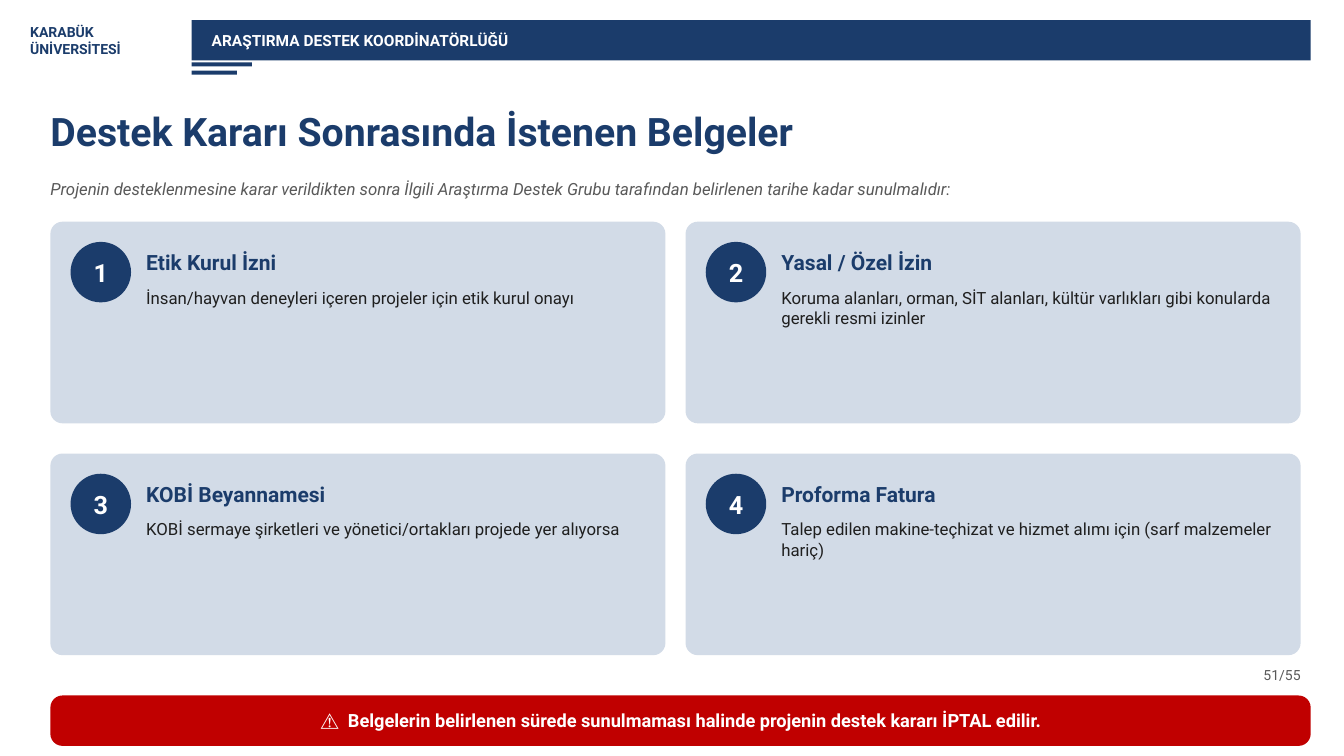
import dataclasses

import pptx
import pptx.dml.color
import pptx.enum.shapes
import pptx.enum.text
import pptx.util

Inches = pptx.util.Inches
Kind = pptx.enum.shapes.MSO_SHAPE
Align = pptx.enum.text.PP_ALIGN
Anchor = pptx.enum.text.MSO_ANCHOR


@dataclasses.dataclass(frozen=True)
class Style:
    """Size, colour and weight of a piece of text."""
    size: int
    color: str
    bold: bool = False
    slant: bool = False


@dataclasses.dataclass(frozen=True)
class Theme:
    """Font, colours and text styles of the slide."""
    font: str = "Roboto"
    navy: str = "1B3C6B"
    card: str = "D2DBE7"
    red: str = "C00000"
    logo: Style = Style(10, "1B3C6B", True)
    unit: Style = Style(11, "FFFFFF", True)
    page: Style = Style(10, "595959")
    title: Style = Style(28, "1B3C6B", True)
    intro: Style = Style(12, "595959", slant=True)
    badge: Style = Style(18, "FFFFFF", True)
    head: Style = Style(15, "1B3C6B", True)
    body: Style = Style(12, "1F1F1F")
    alert: Style = Style(13, "FFFFFF", True)


THEME = Theme()

CARDS = [
    ("Etik Kurul İzni",
     "İnsan/hayvan deneyleri içeren projeler için etik kurul onayı"),
    ("Yasal / Özel İzin",
     "Koruma alanları, orman, SİT alanları, kültür varlıkları gibi konularda gerekli resmi izinler"),
    ("KOBİ Beyannamesi",
     "KOBİ sermaye şirketleri ve yönetici/ortakları projede yer alıyorsa"),
    ("Proforma Fatura",
     "Talep edilen makine-teçhizat ve hizmet alımı için (sarf malzemeler hariç)"),
]


def color(code):
    """Turn a hex code into a colour."""
    return pptx.dml.color.RGBColor.from_string(code)


def write(shape, lines, style, align=Align.LEFT, anchor=Anchor.MIDDLE, indent=0):
    """Fill a shape with styled lines of text."""
    frame = shape.text_frame
    frame.word_wrap = True
    frame.auto_size = pptx.enum.text.MSO_AUTO_SIZE.NONE
    frame.vertical_anchor = anchor
    frame.margin_left = Inches(indent)
    frame.margin_top = frame.margin_right = frame.margin_bottom = 0
    for order, line in enumerate(lines):
        para = frame.add_paragraph() if order else frame.paragraphs[0]
        para.alignment = align
        run = para.add_run()
        run.text = line
        run.font.name = THEME.font
        run.font.size = pptx.util.Pt(style.size)
        run.font.bold = style.bold
        run.font.italic = style.slant
        run.font.color.rgb = color(style.color)


def label(slide, box, lines, style, **extra):
    """Add a text box."""
    write(slide.shapes.add_textbox(*map(Inches, box)), lines, style, **extra)


def block(slide, kind, box, fill, curve=None):
    """Add a filled shape without outline or shadow."""
    shape = slide.shapes.add_shape(kind, *map(Inches, box))
    shape.shadow.inherit = False
    shape.fill.solid()
    shape.fill.fore_color.rgb = color(fill)
    shape.line.fill.background()
    if curve is not None:
        shape.adjustments[0] = curve
    return shape


def header(slide, left, top, width):
    """Place the university name, the unit bar and its two accent lines."""
    label(slide, (left, top, 1.5, 0.5), ["KARABÜK", "ÜNİVERSİTESİ"], THEME.logo)
    start = left + 1.6
    bar = block(slide, Kind.RECTANGLE, (start, top + 0.05, width - 1.6, 0.4), THEME.navy)
    write(bar, ["ARAŞTIRMA DESTEK KOORDİNATÖRLÜĞÜ"], THEME.unit, indent=0.2)
    for drop, length in ((0.47, 0.6), (0.55, 0.45)):
        block(slide, Kind.RECTANGLE, (start, top + drop, length, 0.04), THEME.navy)


def opening(slide, left, top, width):
    """Place the title and the introductory sentence."""
    title = slide.shapes.title
    title.left, title.top = Inches(left), Inches(top)
    title.width, title.height = Inches(width), Inches(0.7)
    write(title, ["Destek Kararı Sonrasında İstenen Belgeler"], THEME.title)
    label(slide, (left, top + 0.7, width, 0.45),
          ["Projenin desteklenmesine karar verildikten sonra İlgili Araştırma Destek Grubu "
           "tarafından belirlenen tarihe kadar sunulmalıdır:"], THEME.intro)


def card(slide, left, top, width, height, number, head, body):
    """Place one numbered document card."""
    block(slide, Kind.ROUNDED_RECTANGLE, (left, top, width, height), THEME.card, 0.06)
    badge = block(slide, Kind.OVAL, (left + 0.2, top + 0.2, 0.6, 0.6), THEME.navy)
    write(badge, [str(number)], THEME.badge, align=Align.CENTER)
    start, room = left + 0.95, width - 1.1
    label(slide, (start, top + 0.2, room, 0.4), [head], THEME.head)
    label(slide, (start, top + 0.65, room, height - 0.75), [body], THEME.body, anchor=Anchor.TOP)


def grid(slide, left, top, width, height):
    """Place the cards in two columns and two rows."""
    gap_x, gap_y = 0.2, 0.3
    wide, high = (width - gap_x) / 2, (height - gap_y) / 2
    for order, (head, body) in enumerate(CARDS):
        row, col = divmod(order, 2)
        card(slide, left + col * (wide + gap_x), top + row * (high + gap_y),
             wide, high, order + 1, head, body)


def footer(slide, left, top, width):
    """Place the warning banner with the page number clear above its right end."""
    label(slide, (left + width - 1.1, top - 0.35, 1, 0.3), ["51/55"], THEME.page,
          align=Align.RIGHT)
    banner = block(slide, Kind.ROUNDED_RECTANGLE, (left, top, width, 0.5), THEME.red, 0.24)
    write(banner, ["⚠  Belgelerin belirlenen sürede sunulmaması halinde "
                   "projenin destek kararı İPTAL edilir."], THEME.alert, align=Align.CENTER)


def main():
    """Build and save the slide."""
    deck = pptx.Presentation()
    deck.slide_width, deck.slide_height = Inches(13.33), Inches(7.5)
    slide = deck.slides.add_slide(deck.slide_layouts.get_by_name("Title Only"))
    header(slide, 0.3, 0.15, 12.7)
    opening(slide, 0.5, 0.95, 12.3)
    grid(slide, 0.5, 2.2, 12.4, 4.3)
    footer(slide, 0.5, 6.9, 12.5)
    deck.save("out.pptx")


if __name__ == "__main__":
    main()
